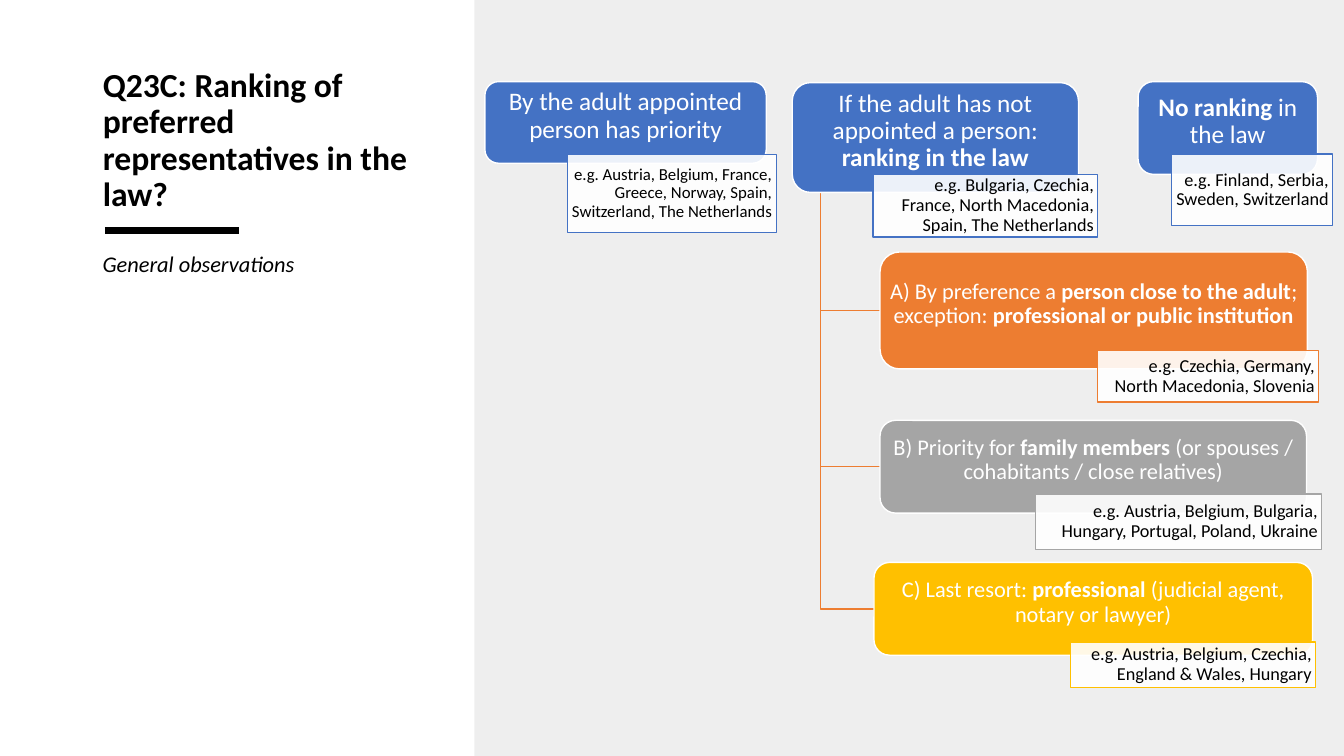
import lxml.etree
import pptx
import pptx.dml.color
import pptx.enum.shapes
import pptx.enum.text
import pptx.oxml.ns
import pptx.util

THEME = {
    "font": "Calibri", "black": "000000", "white": "FFFFFF", "panel": "D9D9D9",
    "blue": "4472C4", "orange": "ED7D31", "grey": "A5A5A5", "gold": "FFC000",
    "title": 24, "heading": 18, "option": 16, "note": 13, "small_note": 12,
}
SHAPES = pptx.enum.shapes.MSO_SHAPE
ALIGN = pptx.enum.text.PP_ALIGN
ANCHOR = pptx.enum.text.MSO_ANCHOR

deck = pptx.Presentation()
deck.slide_width = pptx.util.Inches(13.33)
deck.slide_height = pptx.util.Inches(7.5)
page = deck.slides.add_slide(deck.slide_layouts[5])
# The grid has 100 columns and 100 rows.
COLUMN = deck.slide_width / 100
ROW = deck.slide_height / 100


def add_block(kind, area, fill, line=None, opacity=100):
    """Add a preset shape; area is left, top, width, height in grid units."""
    left, top, width, height = area
    block = page.shapes.add_shape(kind, int(left * COLUMN), int(top * ROW),
                                  int(width * COLUMN), int(height * ROW))
    block.shadow.inherit = False
    block.fill.solid()
    block.fill.fore_color.rgb = pptx.dml.color.RGBColor.from_string(THEME[fill])
    if opacity < 100:
        color = block.fill._xPr.find(".//" + pptx.oxml.ns.qn("a:srgbClr"))
        alpha = lxml.etree.SubElement(color, pptx.oxml.ns.qn("a:alpha"))
        alpha.set("val", str(opacity * 1000))
    if line:
        block.line.color.rgb = pptx.dml.color.RGBColor.from_string(THEME[line])
        block.line.width = pptx.util.Pt(1)
    else:
        block.line.fill.background()
    return block


def write(box, text, size, color, align, anchor, margins=None, italic=False):
    """Fill a box with one paragraph; parts between asterisks are bold."""
    frame = box.text_frame
    frame.word_wrap = True
    frame.auto_size = pptx.enum.text.MSO_AUTO_SIZE.NONE
    frame.vertical_anchor = anchor
    if margins:
        side, bottom = margins
        frame.margin_left = frame.margin_right = pptx.util.Inches(side)
        frame.margin_top = pptx.util.Inches(0.01)
        frame.margin_bottom = pptx.util.Inches(bottom)
    para = frame.paragraphs[0]
    para.alignment = align
    para.line_spacing = 0.9
    for number, part in enumerate(text.split("*")):
        if part:
            span = para.add_run()
            span.text = part
            span.font.name = THEME["font"]
            span.font.size = pptx.util.Pt(THEME[size])
            span.font.color.rgb = pptx.dml.color.RGBColor.from_string(THEME[color])
            span.font.bold = number % 2 == 1
            span.font.italic = italic


add_block(SHAPES.RECTANGLE, (35.3, 0, 64.7, 100), "panel", opacity=44)

rule_y = int(30.5 * ROW)
rule = page.shapes.add_connector(pptx.enum.shapes.MSO_CONNECTOR.STRAIGHT,
                                 int(7.8 * COLUMN), rule_y, int(17.8 * COLUMN), rule_y)
rule.line.color.rgb = pptx.dml.color.RGBColor.from_string(THEME["black"])
rule.line.width = pptx.util.Pt(4.5)
lxml.etree.SubElement(rule._element.spPr, pptx.oxml.ns.qn("a:effectLst"))

title = page.shapes.title
title.left, title.top = int(6.9 * COLUMN), int(8.67 * ROW)
title.width, title.height = int(27.1 * COLUMN), int(20.27 * ROW)
write(title, "*Q23C: Ranking of preferred representatives in the law?*",
      "title", "black", ALIGN.LEFT, ANCHOR.BOTTOM)

subtitle = page.shapes.add_textbox(title.left, int(32.8 * ROW), title.width, int(6.93 * ROW))
write(subtitle, "General observations", "option", "black", ALIGN.LEFT, ANCHOR.TOP, italic=True)

# Each card: area, colour, text size, text, then the area, text size and text of its note.
headings = [
    ((36.08, 10.8, 20.93, 10.8), "blue", "heading",
     "By the adult appointed person has priority",
     (42.23, 20.4, 15.53, 10.4), "small_note",
     "e.g. Austria, Belgium, France, Greece, Norway, Spain, Switzerland, The Netherlands"),
    ((58.95, 10.93, 21.3, 14.53), "blue", "heading",
     "If the adult has not appointed a person: *ranking in the law*",
     (64.95, 23.07, 16.73, 8.27), "note",
     "e.g. Bulgaria, Czechia, France, North Macedonia, Spain, The Netherlands"),
    ((84.68, 10.8, 13.35, 12.27), "blue", "heading",
     "*No ranking *in the law",
     (87.15, 20.4, 12, 9.47), "note",
     "e.g. Finland, Serbia, Sweden, Switzerland"),
]
options = [
    ((65.48, 33.33, 31.8, 15.47), "orange", "option",
     "A) By preference a *person close to the adult*; exception: "
     "*professional or public institution*",
     (81.68, 46.4, 16.43, 6.8), "note",
     "e.g. Czechia, Germany, North Macedonia, Slovenia"),
    ((65.48, 55.6, 31.73, 12.27), "grey", "option",
     "B) Priority for *family members *(or spouses / cohabitants / close relatives)",
     (77.03, 65.33, 21.3, 7.33), "note",
     "e.g. Austria, Belgium, Bulgaria, Hungary, Portugal, Poland, Ukraine"),
    ((65.03, 74.4, 32.63, 12.27), "gold", "option",
     "C) Last resort: *professional* (judicial agent, notary or lawyer)",
     (79.65, 84.93, 18.23, 6), "note",
     "e.g. Austria, Belgium, Czechia, England & Wales, Hungary"),
]

trunk_x, trunk_top = int(61.05 * COLUMN), int(25.46 * ROW)
for (left, top, width, height), *rest in reversed(options):
    middle = int((top + height / 2) * ROW)
    builder = page.shapes.build_freeform(trunk_x, trunk_top)
    builder.add_line_segments([(trunk_x, middle), (int(left * COLUMN), middle)], close=False)
    branch = builder.convert_to_shape()
    branch.shadow.inherit = False
    branch.fill.background()
    branch.line.color.rgb = pptx.dml.color.RGBColor.from_string(THEME["orange"])
    branch.line.width = pptx.util.Pt(1)

for area, color, size, text, note_area, note_size, note_text in headings + options:
    card = add_block(SHAPES.ROUNDED_RECTANGLE, area, color, "white")
    write(card, text, size, "white", ALIGN.CENTER, ANCHOR.MIDDLE, (0.01, 0.13))
    note = add_block(SHAPES.RECTANGLE, note_area, "white", color, opacity=90)
    write(note, note_text, note_size, "black", ALIGN.RIGHT, ANCHOR.MIDDLE, (0.04, 0.01))

deck.save("out.pptx")
